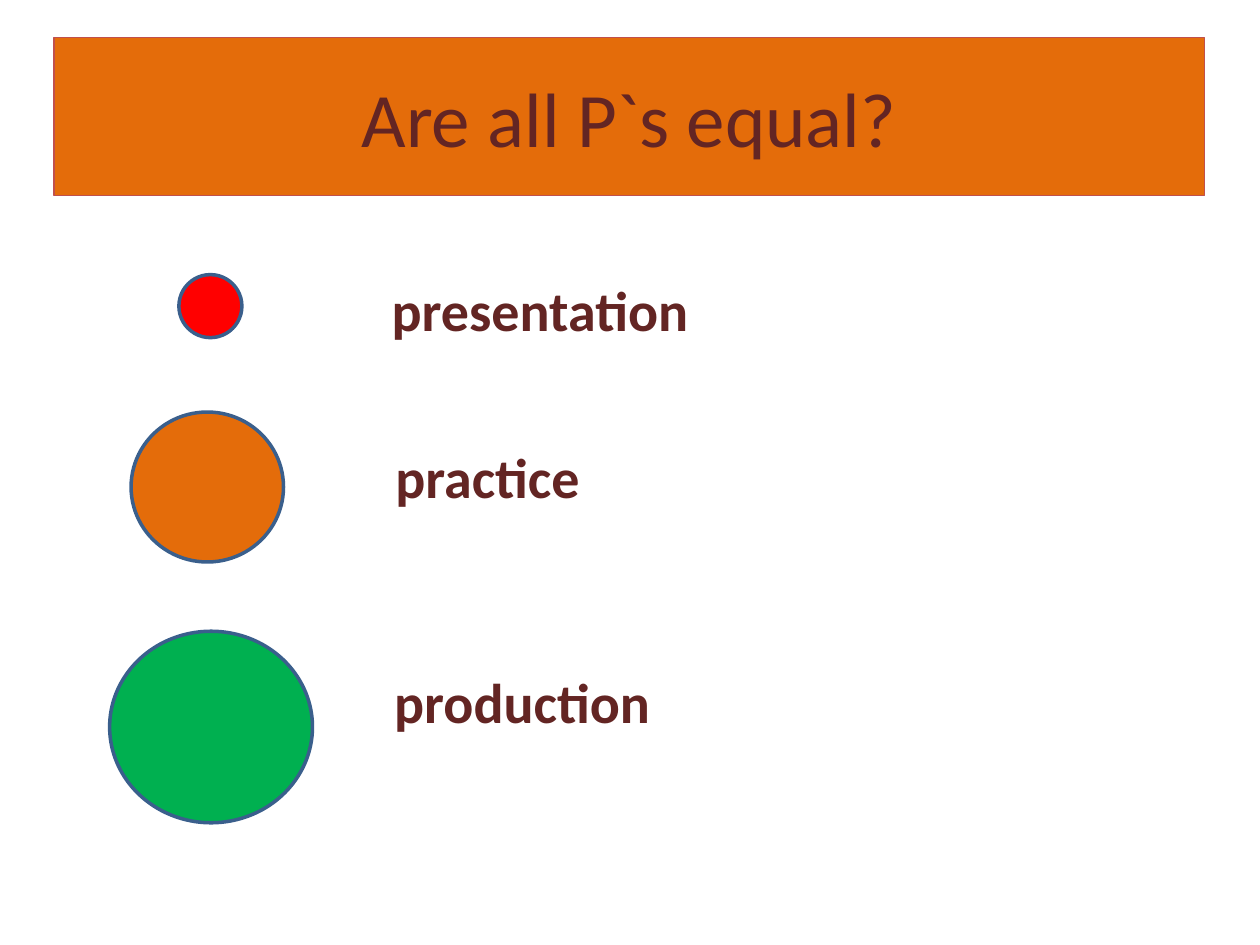
import pptx
import pptx.util
from pptx.dml.color import RGBColor
from pptx.enum.shapes import MSO_SHAPE
from pptx.enum.text import MSO_ANCHOR, MSO_AUTO_SIZE, PP_ALIGN
from pptx.util import Inches, Pt

ORANGE = RGBColor(0xE4, 0x6C, 0x0A)
RED = RGBColor(0xFF, 0x00, 0x00)
GREEN = RGBColor(0x00, 0xB0, 0x50)
MAROON = RGBColor(0x63, 0x25, 0x23)
BRICK = RGBColor(0xC0, 0x50, 0x4D)
BLUE = RGBColor(0x3A, 0x5F, 0x8C)

TITLE = "Are all P`s equal?"
TITLE_BOX = (0.43, 0.3, 9.13, 1.25)

# label, label box, wraps, circle box, circle colour
STAGES = [
    ("presentation", (3.01, 2.14, 3.39, 0.64), True, (1.42, 2.18, 0.5, 0.5), RED),
    ("practice", (3.04, 3.46, 2.02, 0.64), True, (1.04, 3.27, 1.21, 1.19), ORANGE),
    ("production", (3.03, 5.25, 2.25, 0.64), False, (0.87, 5.01, 1.61, 1.52), GREEN),
]


def add_filled(slide, kind, box, fill, line, line_width):
    shape = slide.shapes.add_shape(kind, *map(Inches, box))
    shape.shadow.inherit = False
    shape.fill.solid()
    shape.fill.fore_color.rgb = fill
    shape.line.color.rgb = line
    shape.line.width = Pt(line_width)
    return shape


def write(frame, text, size, bold, align):
    paragraph = frame.paragraphs[0]
    paragraph.alignment = align
    run = paragraph.add_run()
    run.text = text
    run.font.color.rgb = MAROON
    font_format = {"name": "Calibri", "size": Pt(size), "bold": bold}
    for attribute, value in font_format.items():
        setattr(run.font, attribute, value)


def main():
    deck = pptx.Presentation()
    deck.slide_width, deck.slide_height = Inches(10), Inches(7.5)
    slide = deck.slides.add_slide(deck.slide_layouts[6])

    banner = add_filled(slide, MSO_SHAPE.RECTANGLE, TITLE_BOX, ORANGE, BRICK, 0.75)
    banner.text_frame.vertical_anchor = MSO_ANCHOR.MIDDLE
    write(banner.text_frame, TITLE, 44, False, PP_ALIGN.CENTER)

    for label, label_box, wraps, circle_box, colour in STAGES:
        add_filled(slide, MSO_SHAPE.FLOWCHART_CONNECTOR, circle_box, colour, BLUE, 2)
        caption = slide.shapes.add_textbox(*map(Inches, label_box)).text_frame
        caption.word_wrap = wraps
        caption.auto_size = MSO_AUTO_SIZE.SHAPE_TO_FIT_TEXT
        write(caption, label, 32, True, PP_ALIGN.LEFT)

    deck.save("out.pptx")


if __name__ == "__main__":
    main()
